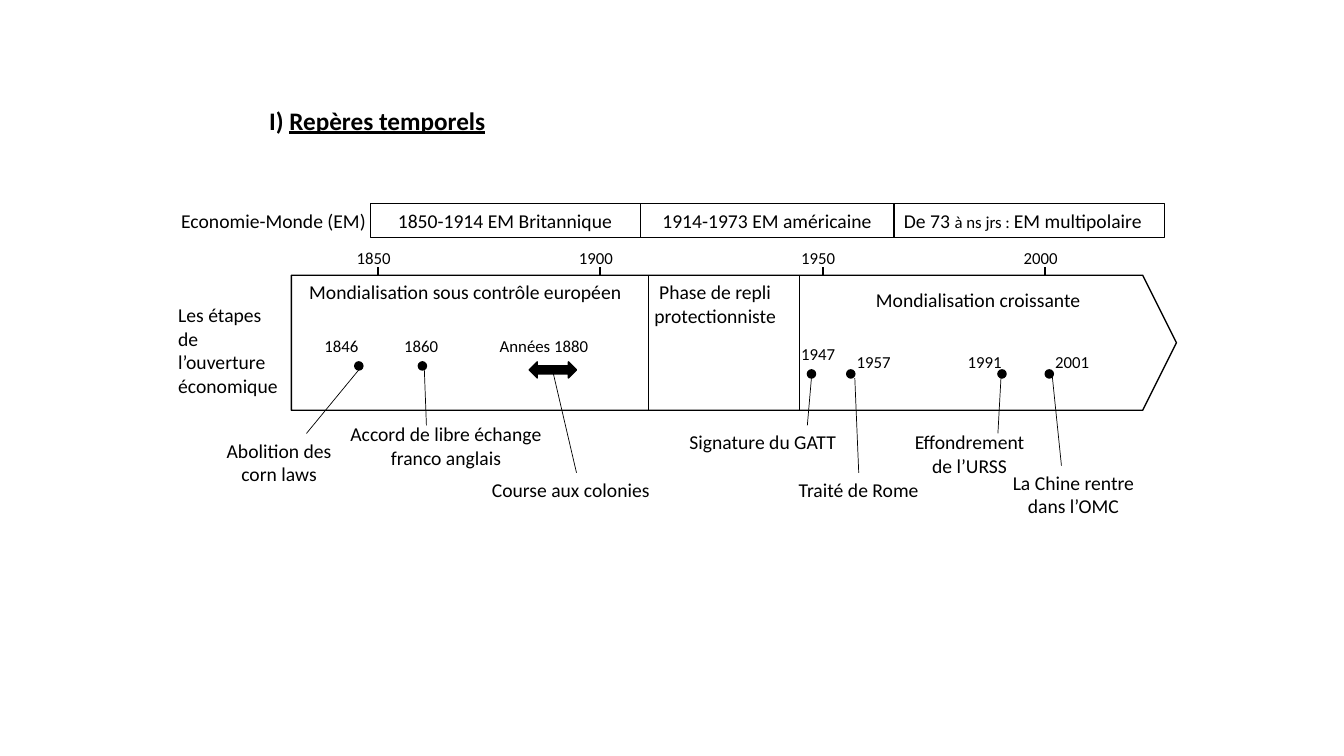
import dataclasses
import typing

import pptx
import pptx.dml.color
import pptx.enum.shapes
import pptx.enum.text
import pptx.oxml
import pptx.oxml.ns
import pptx.util

Pt = pptx.util.Pt
Shapes = pptx.enum.shapes.MSO_SHAPE
Align = pptx.enum.text.PP_ALIGN

COLOURS = {"ink": "000000", "paper": "FFFFFF"}
FONT = "Calibri"
BAND_TOP, BAND_BOTTOM = 196.6, 292.6
TICK_START, TICK_STEP = 270, 158.8
DOT = 5.8


@dataclasses.dataclass
class Label:
    text: str
    left: float
    top: float
    width: float
    size: int = 14
    lines: int = 1
    align: typing.Any = Align.CENTER


@dataclasses.dataclass
class Era:
    wording: list[tuple[str, int]]
    left: float
    width: float
    align: typing.Any = Align.CENTER


@dataclasses.dataclass
class Event:
    date: Label
    caption: Label
    marker: tuple[float, float]
    leader: tuple[float, float, float, float]
    lasting: bool = False


def year(text: str, left: float, top: float, width: float = 51) -> Label:
    return Label(text, left, top, width, 12, 1, Align.LEFT)


ERAS = [
    Era([("1850-1914 EM Britannique", 14)], 264.3, 192.9),
    Era([("1914-1973 EM américaine", 14)], 457.2, 181.4),
    Era([("De 73 ", 14), ("à ns jrs : ", 12), ("EM multipolaire", 14)], 638.6, 192.9, Align.LEFT),
]

LABELS = [
    Label("Economie-Monde (EM)", 120.2, 145.4, 150.5),
    Label("Les étapes de l’ouverture économique", 120.2, 213.1, 87.8, lines=4, align=Align.LEFT),
    Label("Mondialisation sous contrôle européen", 213.8, 196.6, 244.1, align=Align.LEFT),
    Label("Phase de repli protectionniste", 457.2, 196.6, 107.3, lines=2),
    Label("Mondialisation croissante", 576.7, 202.3, 244.1),
]

EVENTS = [
    Event(year("1846", 224.6, 236.2), Label("Abolition des corn laws", 145.4, 309.6, 108, lines=2),
          (253.4, 258.5), (218.9, 309.6, 256.3, 264.2)),
    Event(year("1860", 281.5, 236.2), Label("Accord de libre échange franco anglais", 241.9, 298.1, 153.4, lines=2),
          (298.8, 258.5), (303.1, 263.5, 304.6, 303.8)),
    Event(year("Années 1880", 349.9, 236.2, 90.7), Label("Course aux colonies", 344.2, 337.7, 136.1, align=Align.LEFT),
          (378, 258.5), (395.3, 267.1, 411.8, 337.7), lasting=True),
    Event(year("1947", 565.2, 241.9, 39.6), Label("Signature du GATT", 485.3, 303.8, 124.6, align=Align.LEFT),
          (576.7, 264.2), (576.7, 303.8, 579.6, 270)),
    Event(year("1957", 604.8, 247.7), Label("Traité de Rome", 559.4, 337.7, 108),
          (604.8, 264.2), (610.6, 270, 613.4, 337.7)),
    Event(year("1991", 684, 247.7), Label("Effondrement de l’URSS", 638.6, 303.8, 108, lines=2),
          (712.8, 264.2), (715, 270, 712.8, 309.6)),
    Event(year("2001", 746.6, 247.7, 39.6), Label("La Chine rentre dans l’OMC", 712.8, 332.6, 108, lines=2),
          (746.6, 264.2), (751.7, 269.3, 758.2, 332.6)),
]


def colour(name: str) -> pptx.dml.color.RGBColor:
    return pptx.dml.color.RGBColor.from_string(COLOURS[name])


def style_span(span: typing.Any, size: float) -> None:
    span.font.name = FONT
    span.font.size = Pt(size)
    span.font.color.rgb = colour("ink")


def add_label(page: typing.Any, label: Label) -> None:
    height = label.lines * label.size * 1.2 + 7.2
    box = page.shapes.add_textbox(Pt(label.left), Pt(label.top), Pt(label.width), Pt(height))
    box.text_frame.word_wrap = True
    para = box.text_frame.paragraphs[0]
    para.text = label.text
    para.alignment = label.align
    style_span(para.runs[0], label.size)


def add_line(page: typing.Any, ends: tuple[float, float, float, float], weight: float) -> None:
    line = page.shapes.add_connector(
        pptx.enum.shapes.MSO_CONNECTOR.STRAIGHT, *(Pt(value) for value in ends))
    line.line.color.rgb = colour("ink")
    line.line.width = Pt(weight)
    properties = line._element.spPr
    properties.append(pptx.oxml.parse_xml(f"<a:effectLst {pptx.oxml.ns.nsdecls('a')}/>"))


def add_outline(page: typing.Any, kind: typing.Any, frame: tuple[float, float, float, float],
                weight: float, filled: bool = False) -> typing.Any:
    shape = page.shapes.add_shape(kind, *(Pt(value) for value in frame))
    shape.shadow.inherit = False
    shape.line.color.rgb = colour("ink")
    shape.line.width = Pt(weight)
    if filled:
        shape.fill.solid()
        shape.fill.fore_color.rgb = colour("ink")
    else:
        shape.fill.background()
    return shape


def add_era(page: typing.Any, era: Era) -> None:
    box = add_outline(page, Shapes.RECTANGLE, (era.left, 145.4, era.width, 24.3), 0.75)
    para = box.text_frame.paragraphs[0]
    para.alignment = era.align
    for text, size in era.wording:
        span = para.add_run()
        span.text = text
        style_span(span, size)


def add_event(page: typing.Any, event: Event) -> None:
    kind, size = (Shapes.LEFT_RIGHT_ARROW, (33.8, 11.5)) if event.lasting else (Shapes.OVAL, (DOT, DOT))
    add_outline(page, kind, event.marker + size, 1, filled=True)
    add_label(page, event.date)
    add_label(page, event.caption)
    add_line(page, event.leader, 0.5)


def set_title(page: typing.Any) -> None:
    title = page.shapes.title
    title.left, title.top, title.width, title.height = Pt(185), Pt(71.3), Pt(187.2), Pt(28.8)
    title.text_frame.word_wrap = True
    title.text_frame.auto_size = pptx.enum.text.MSO_AUTO_SIZE.NONE
    title.text_frame.vertical_anchor = pptx.enum.text.MSO_ANCHOR.TOP
    para = title.text_frame.paragraphs[0]
    para.alignment = Align.LEFT
    for text, underlined in (("I) ", False), ("Repères temporels", True)):
        span = para.add_run()
        span.text = text
        style_span(span, 18)
        span.font.bold = True
        span.font.underline = underlined


def main() -> None:
    deck = pptx.Presentation()
    deck.slide_width, deck.slide_height = Pt(960), Pt(540)
    page = deck.slides.add_slide(deck.slide_layouts[5])
    page.background.fill.solid()
    page.background.fill.fore_color.rgb = colour("paper")
    set_title(page)
    for era in ERAS:
        add_era(page, era)
    band = add_outline(page, Shapes.PENTAGON, (208.1, BAND_TOP, 632.2, 96.5), 1)
    band.adjustments[0] = 0.25
    for left in (463, 571):
        add_line(page, (left, BAND_TOP, left, BAND_BOTTOM), 0.5)
    for index, text in enumerate(("1850", "1900", "1950", "2000")):
        left = TICK_START + index * TICK_STEP
        add_line(page, (left, 190.8, left, BAND_TOP), 1.5)
        add_label(page, year(text, left - 22.4, 173.5))
    for label in LABELS:
        add_label(page, label)
    for event in EVENTS:
        add_event(page, event)
    deck.save("out.pptx")


if __name__ == "__main__":
    main()
